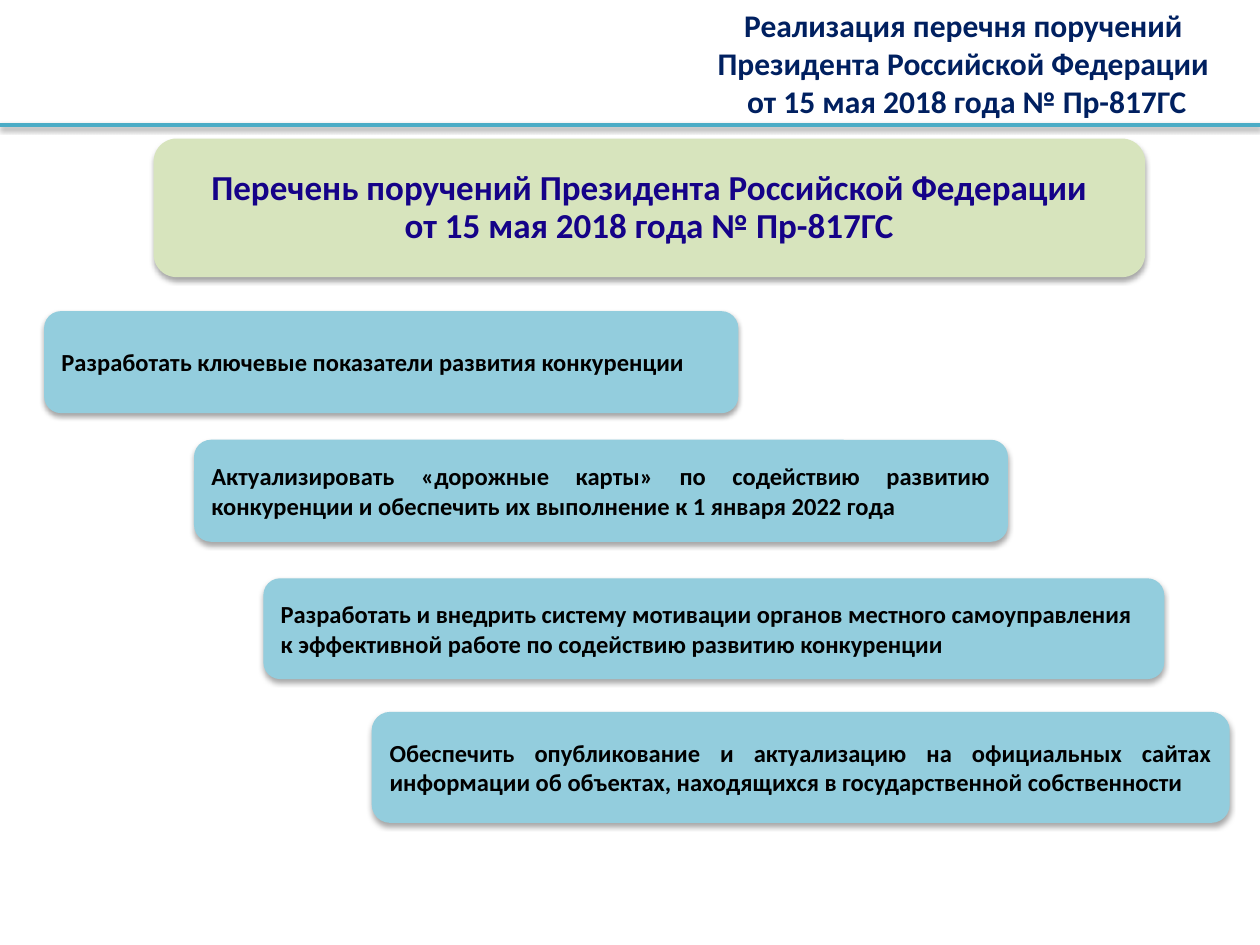
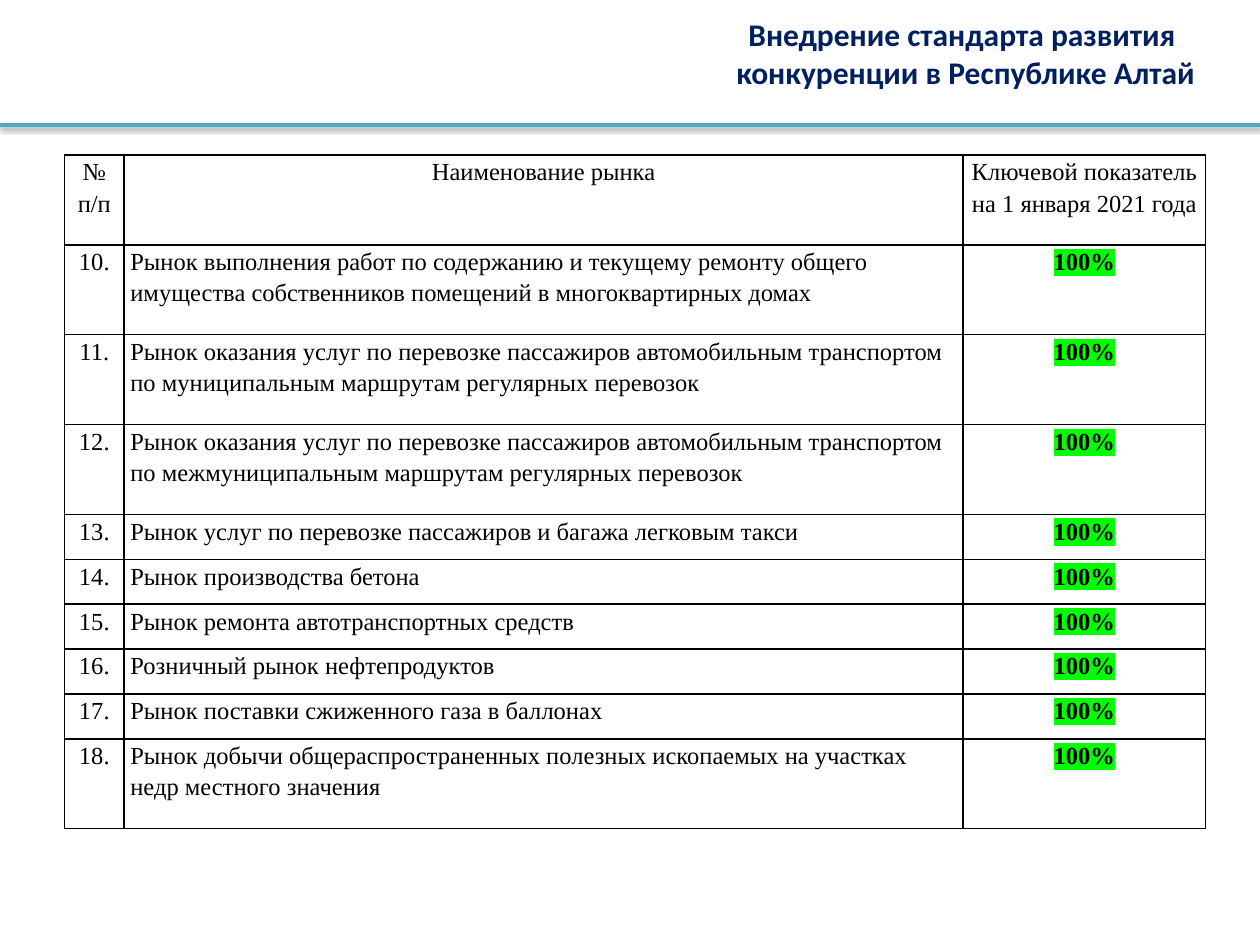
from pptx import Presentation
from pptx.dml.color import RGBColor
from pptx.enum.shapes import MSO_CONNECTOR, MSO_SHAPE
from pptx.enum.text import MSO_ANCHOR, MSO_AUTO_SIZE, PP_ALIGN
from pptx.oxml import parse_xml
from pptx.oxml.ns import nsdecls, qn
from pptx.util import Pt

ROUNDED = MSO_SHAPE.ROUNDED_RECTANGLE
STRAIGHT = MSO_CONNECTOR.STRAIGHT
TOP, MIDDLE = MSO_ANCHOR.TOP, MSO_ANCHOR.MIDDLE
LEFT, CENTER, JUSTIFY = PP_ALIGN.LEFT, PP_ALIGN.CENTER, PP_ALIGN.JUSTIFY
NO_AUTOFIT = MSO_AUTO_SIZE.NONE

NAVY = RGBColor(0x00, 0x20, 0x60)
INDIGO = RGBColor(0x15, 0x02, 0x88)
TEAL = RGBColor(0x4B, 0xAC, 0xC6)
SKY = RGBColor(0x93, 0xCD, 0xDD)
SAGE = RGBColor(0xD7, 0xE4, 0xBD)
BLACK = RGBColor(0x00, 0x00, 0x00)
LIME = RGBColor(0x00, 0xFF, 0x00)

SLIDE_WIDTH, SLIDE_HEIGHT = 720, 540
RULE_TOP = 71.3
TITLE_ONLY = 5
HEADING_FONT, TABLE_FONT = "Calibri", "Times New Roman"

ORDER_BOX = (87.8, 79.2, 566.6, 79.2)
ORDER = "Перечень поручений Президента Российской Федерации\nот 15 мая 2018 года № Пр-817ГС"
TASKS = [
    ((25.2, 177.8, 396.7, 58.3), "Разработать ключевые показатели развития конкуренции"),
    ((110.9, 251.3, 465.1, 58.3),
     "Актуализировать «дорожные карты» по содействию развитию конкуренции "
     "и обеспечить их выполнение к 1 января 2022 года"),
    ((150.5, 330.5, 514.8, 57.6),
     "Разработать и внедрить систему мотивации органов местного самоуправления \n"
     "к эффективной работе по содействию развитию конкуренции"),
    ((212.4, 406.8, 490.3, 63.4),
     "Обеспечить опубликование и актуализацию на официальных сайтах информации "
     "об объектах, находящихся в государственной собственности"),
]

TABLE_BOX = (36.9, 88.6, 652, 385.2)
NUMBER_WIDTH, RESULT_WIDTH = 34, 138.5
SHORT_ROW, TALL_ROW = 25.68, 51.36
HEADERS = ("№ п/п", "Наименование рынка", "Ключевой показатель \nна 1 января 2021 года")
FIRST_NUMBER = 10
RESULT = "100%"
MARKETS = [
    ("Рынок выполнения работ по содержанию и текущему ремонту общего имущества "
     "собственников помещений в многоквартирных домах", TALL_ROW),
    ("Рынок оказания услуг по перевозке пассажиров автомобильным транспортом "
     "по муниципальным маршрутам регулярных перевозок", TALL_ROW),
    ("Рынок оказания услуг по перевозке пассажиров автомобильным транспортом "
     "по межмуниципальным маршрутам регулярных перевозок", TALL_ROW),
    ("Рынок услуг по перевозке пассажиров и багажа легковым такси", SHORT_ROW),
    ("Рынок производства бетона", SHORT_ROW),
    ("Рынок ремонта автотранспортных средств", SHORT_ROW),
    ("Розничный рынок нефтепродуктов", SHORT_ROW),
    ("Рынок поставки сжиженного газа в баллонах", SHORT_ROW),
    ("Рынок добычи общераспространенных полезных ископаемых на участках "
     "недр местного значения", TALL_ROW),
]


def points(box):
    return [Pt(length) for length in box]


def write_text(frame, text, font=HEADING_FONT, size=14, color=BLACK, bold=True,
               align=LEFT, spacing=1.0, highlight=None):
    for index, line in enumerate(text.split("\n")):
        paragraph = frame.paragraphs[0] if index == 0 else frame.add_paragraph()
        paragraph.alignment = align
        paragraph.line_spacing = spacing
        run = paragraph.add_run()
        run.text = line
        run.font.name = font
        run.font.size = Pt(size)
        run.font.bold = bold
        run.font.color.rgb = color
        if highlight is not None:
            run.font._element.find(qn("a:solidFill")).addnext(parse_xml(
                f'<a:highlight {nsdecls("a")}><a:srgbClr val="{highlight}"/></a:highlight>'))


def add_shadow(shape, distance, opacity):
    shape._element.spPr.append(parse_xml(
        f'<a:effectLst {nsdecls("a")}>'
        f'<a:outerShdw blurRad="{Pt(3.15)}" dist="{Pt(distance)}" dir="5400000" rotWithShape="0">'
        f'<a:srgbClr val="{BLACK}"><a:alpha val="{opacity * 1000}"/></a:srgbClr>'
        '</a:outerShdw></a:effectLst>'))


def add_titled_slide(presentation, title_box, text):
    slide = presentation.slides.add_slide(presentation.slide_layouts[TITLE_ONLY])
    rule = slide.shapes.add_connector(STRAIGHT, *points((0, RULE_TOP, SLIDE_WIDTH, RULE_TOP)))
    rule.line.color.rgb = TEAL
    rule.line.width = Pt(2)
    add_shadow(rule, distance=1.6, opacity=38)
    title = slide.shapes.title
    title.left, title.top, title.width, title.height = points(title_box)
    frame = title.text_frame
    frame.word_wrap = True
    frame.auto_size = NO_AUTOFIT
    frame.vertical_anchor = TOP
    write_text(frame, text, size=18, color=NAVY, align=CENTER)
    return slide


def add_card(slide, box, text, fill, **text_format):
    card = slide.shapes.add_shape(ROUNDED, *points(box))
    card.fill.solid()
    card.fill.fore_color.rgb = fill
    card.line.fill.background()
    add_shadow(card, distance=1.8, opacity=35)
    frame = card.text_frame
    frame.word_wrap = True
    frame.vertical_anchor = MIDDLE
    write_text(frame, text, **text_format)


def format_cell(cell):
    cell.margin_left = cell.margin_right = Pt(3.6)
    cell.margin_top = cell.margin_bottom = 0
    cell.fill.background()
    properties = cell._tc.get_or_add_tcPr()
    for index, side in enumerate("LRTB"):
        properties.insert(index, parse_xml(
            f'<a:ln{side} {nsdecls("a")} w="{Pt(1)}"><a:solidFill>'
            f'<a:srgbClr val="{BLACK}"/></a:solidFill></a:ln{side}>'))


def add_market_table(slide, box):
    rows = [(HEADERS, TALL_ROW)]
    for number, (market, height) in enumerate(MARKETS, FIRST_NUMBER):
        rows.append(((f"{number}.", market, RESULT), height))
    table = slide.shapes.add_table(len(rows), len(HEADERS), *points(box)).table
    table.first_row = table.horz_banding = False
    widths = (NUMBER_WIDTH, box[2] - NUMBER_WIDTH - RESULT_WIDTH, RESULT_WIDTH)
    for column, width in zip(table.columns, widths):
        column.width = Pt(width)
    for row_index, (texts, height) in enumerate(rows):
        table.rows[row_index].height = Pt(height)
        for column_index, text in enumerate(texts):
            cell = table.cell(row_index, column_index)
            format_cell(cell)
            is_market = row_index > 0 and column_index == 1
            is_result = row_index > 0 and column_index == 2
            write_text(cell.text_frame, text, font=TABLE_FONT, bold=is_result,
                       align=LEFT if is_market else CENTER, spacing=1.15,
                       highlight=LIME if is_result else None)


def build_orders_slide(presentation):
    slide = add_titled_slide(
        presentation, (343.4, 0, 418.3, 72.7),
        "Реализация перечня поручений \nПрезидента Российской Федерации \n"
        "от 15 мая 2018 года № Пр-817ГС")
    add_card(slide, ORDER_BOX, ORDER, SAGE, size=20, color=INDIGO, align=CENTER, spacing=0.9)
    for box, task in TASKS:
        add_card(slide, box, task, SKY, align=JUSTIFY)


def build_markets_slide(presentation):
    slide = add_titled_slide(
        presentation, (342.7, 5, 418.3, 51.1),
        "Внедрение стандарта развития \nконкуренции в Республике Алтай")
    add_market_table(slide, TABLE_BOX)


def main():
    presentation = Presentation()
    presentation.slide_width = Pt(SLIDE_WIDTH)
    presentation.slide_height = Pt(SLIDE_HEIGHT)
    build_orders_slide(presentation)
    build_markets_slide(presentation)
    presentation.save("out.pptx")


if __name__ == "__main__":
    main()
